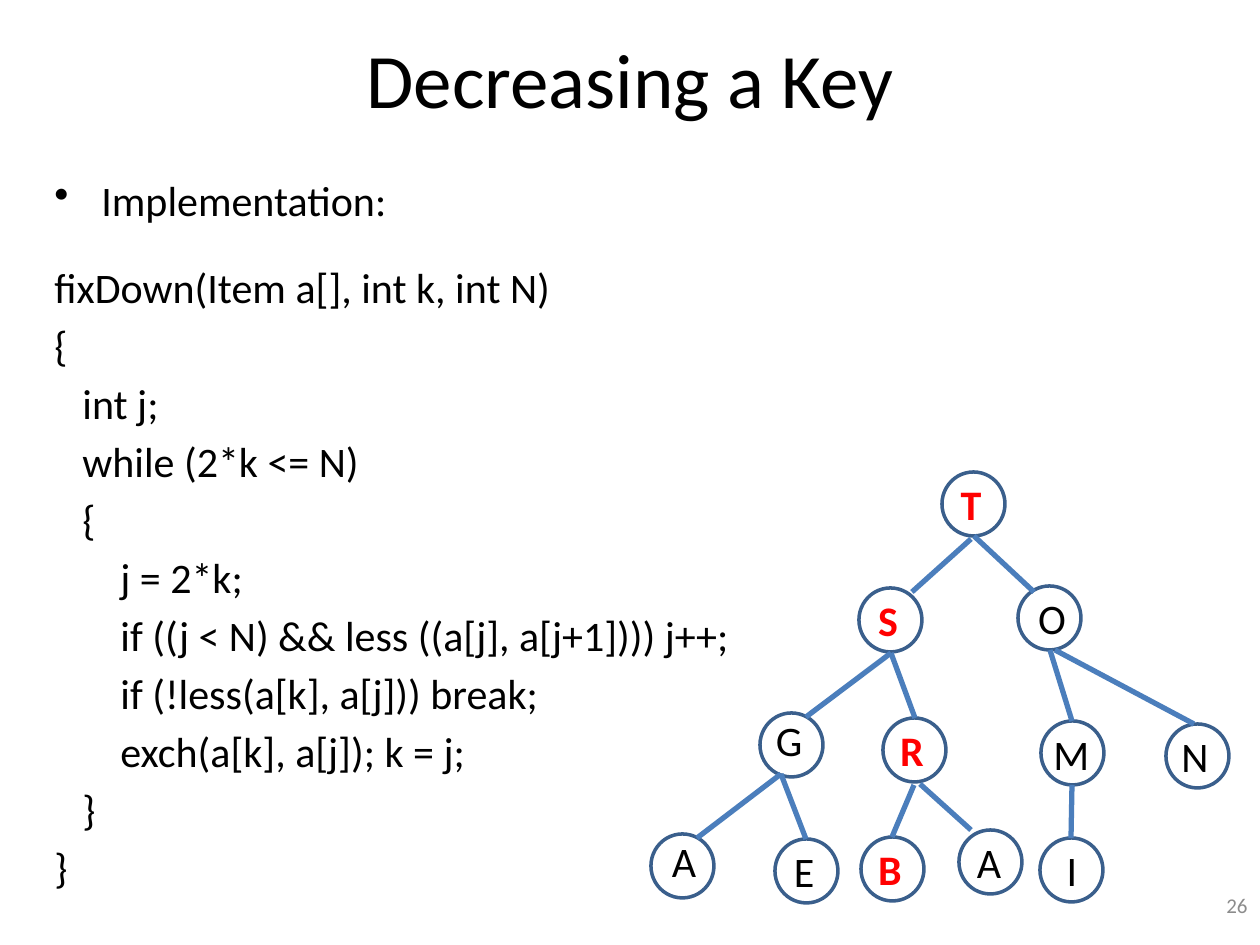
from pptx import Presentation
from pptx.dml.color import RGBColor
from pptx.enum.shapes import MSO_CONNECTOR, MSO_SHAPE
from pptx.enum.text import MSO_ANCHOR, PP_ALIGN
from pptx.oxml.ns import qn
from pptx.util import Emu, Pt

BLACK = RGBColor(0x00, 0x00, 0x00)
RED = RGBColor(0xFF, 0x00, 0x00)
GRAY = RGBColor(0x8C, 0x8C, 0x8C)
RING = RGBColor(0x3A, 0x5F, 0x8C)
EDGE = RGBColor(0x4B, 0x7E, 0xBC)
FONT = "Calibri"

# indent level and text of each code line
CODE = [
    (0, "fixDown(Item a[], int k, int N)"),
    (0, "{"),
    (1, "int j;"),
    (1, "while (2*k <= N)"),
    (1, "{"),
    (2, "j = 2*k;"),
    (2, "if ((j < N) && less ((a[j], a[j+1]))) j++;"),
    (2, "if (!less(a[k], a[j])) break;"),
    (2, "exch(a[k], a[j]); k = j;"),
    (1, "}"),
    (0, "}"),
]
INDENT = (0, 28, 66)

# key, left and top of the circle, shift of the label
NODES = [
    ("T", 942, 472, 0, 0),
    ("S", 859, 588, 0, 0),
    ("O", 1018, 586, 5, 0),
    ("G", 760, 713, 0, -5),
    ("R", 883, 718, 0, 0),
    ("M", 1041, 721, 0, 1),
    ("N", 1166, 724, 0, 0),
    ("A", 651, 834, 4, -5),
    ("E", 775, 839, 0, 0),
    ("B", 861, 837, 0, 0),
    ("A", 959, 830, 1, 0),
    ("I", 1040, 838, 3, 0),
]
HOT = "TSRB"

EDGES = [
    (971, 539, 912, 592), (974, 536, 1034, 592),
    (891, 653, 806, 717), (891, 653, 915, 718),
    (1050, 650, 1072, 721), (1055, 650, 1194, 724),
    (781, 774, 697, 838), (781, 774, 806, 839),
    (914, 785, 892, 837), (920, 784, 971, 830),
    (1072, 785, 1071, 838),
]


def px(n):
    return Emu(round(n * 914400 / 126))


def style(para, size, color=BLACK, bold=False):
    for run in para.runs:
        font = run.font
        font.name, font.size, font.bold = FONT, Pt(size), bold
        font.color.rgb = color


def add_box(slide, x, y, w, h):
    box = slide.shapes.add_textbox(px(x), px(y), px(w), px(h))
    box.text_frame.word_wrap = True
    return box.text_frame


def add_label(slide, area, text, size, align, color, bold=False):
    frame = add_box(slide, *area)
    frame.text = text
    para = frame.paragraphs[0]
    para.alignment = align
    style(para, size, color, bold)
    return frame


def add_title(slide, text):
    title = slide.shapes.title
    title.left, title.top, title.width, title.height = map(px, (63, 10, 1134, 136))
    frame = title.text_frame
    frame.text = text
    frame.vertical_anchor = MSO_ANCHOR.MIDDLE
    frame.paragraphs[0].alignment = PP_ALIGN.CENTER
    style(frame.paragraphs[0], 44)


def add_bullet(para):
    props = para._p.get_or_add_pPr()
    props.set("marL", str(px(47)))
    props.set("indent", str(-px(47)))
    mark = props.makeelement(qn("a:buChar"), {"char": "•"})
    props.append(mark)


def add_code(slide):
    frame = add_box(slide, 42, 168, 1040, 693)
    head = frame.paragraphs[0]
    head.text = "Implementation:"
    head.space_before = Pt(4.3)
    add_bullet(head)
    style(head, 24)
    for row, (level, text) in enumerate(CODE):
        para = frame.add_paragraph()
        para.text = text
        para.space_before = Pt(4.3 if row else 21.3)
        para._p.get_or_add_pPr().set("marL", str(px(INDENT[level])))
        style(para, 24)


def add_node(slide, key, x, y, dx, dy):
    ring = slide.shapes.add_shape(MSO_SHAPE.OVAL, px(x), px(y), px(63), px(64))
    ring.shadow.inherit = False
    ring.fill.background()
    ring.line.color.rgb = RING
    ring.line.width = Pt(2)
    hot = key in HOT
    add_label(slide, (x + dx, y + dy, 58, 63), key, 24,
              PP_ALIGN.CENTER, RED if hot else BLACK, hot)


def add_edge(slide, *ends):
    line = slide.shapes.add_connector(MSO_CONNECTOR.STRAIGHT, *map(px, ends))
    line.line.color.rgb = EDGE
    line.line.width = Pt(3)
    props = line._element.spPr
    props.append(props.makeelement(qn("a:effectLst"), {}))


def main():
    deck = Presentation()
    deck.slide_width, deck.slide_height = px(1260), px(945)
    slide = deck.slides.add_slide(deck.slide_layouts[5])
    add_title(slide, "Decreasing a Key")
    add_code(slide)
    page = add_label(slide, (966, 880, 294, 50), "26", 12, PP_ALIGN.RIGHT, GRAY)
    page.vertical_anchor = MSO_ANCHOR.MIDDLE
    for node in NODES:
        add_node(slide, *node)
    for edge in EDGES:
        add_edge(slide, *edge)
    deck.save("out.pptx")


if __name__ == "__main__":
    main()
